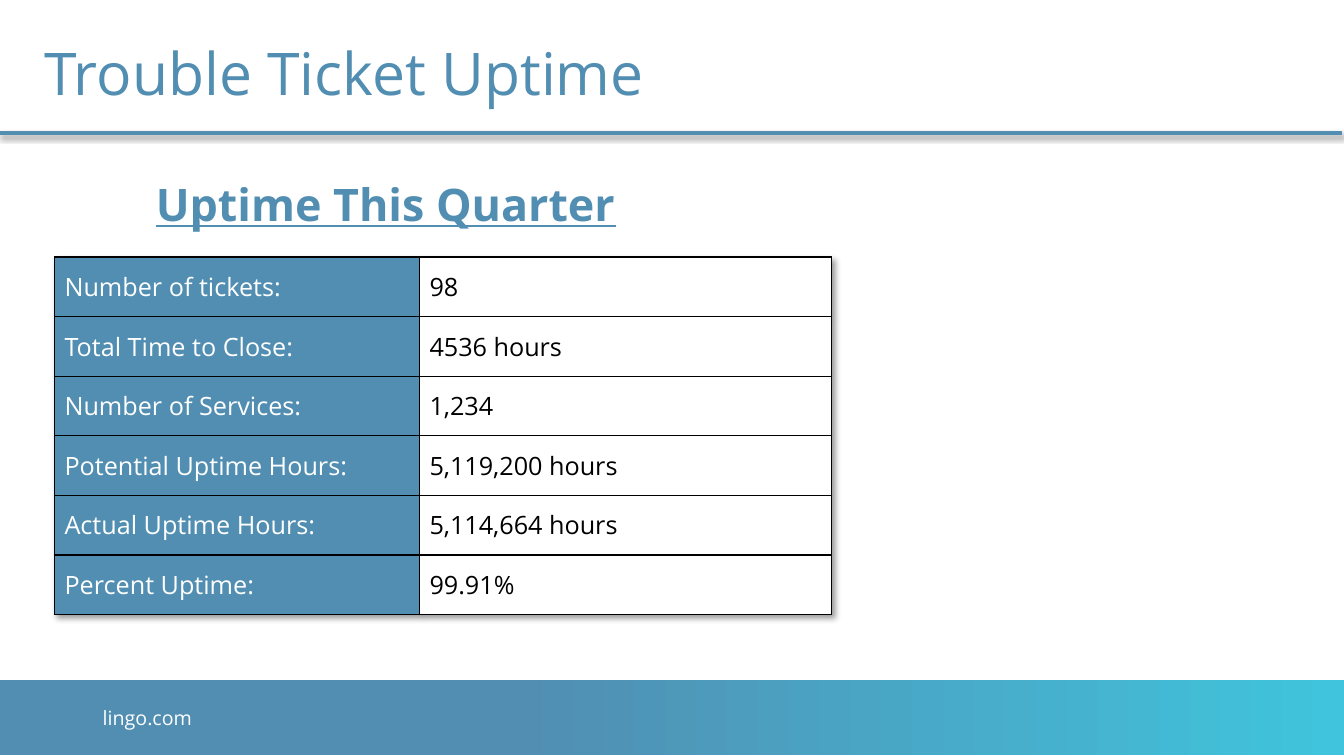
from lxml import etree
from pptx import Presentation
from pptx import util as u
from pptx.dml.color import RGBColor
from pptx.enum import shapes, text
from pptx.oxml import parse_xml
from pptx.oxml.ns import nsdecls, qn

COLORS = {"blue": "518EB2", "aqua": "40C4DD", "white": "FFFFFF", "black": "000000"}
FONT = "Open Sans"
ROWS = [
    ("Number of tickets:", "98"),
    ("Total Time to Close:", "4536 hours"),
    ("Number of Services:", "1,234"),
    ("Potential Uptime Hours:", "5,119,200 hours"),
    ("Actual Uptime Hours:", "5,114,664 hours"),
    ("Percent Uptime:", "99.91%"),
]


def color(name):
    return RGBColor.from_string(COLORS[name])


def add_span(para, words, size, shade, bold=False, underline=False):
    span = para.add_run()
    span.text = words
    font = span.font
    font.name, font.size, font.color.rgb = FONT, u.Pt(size), color(shade)
    font.bold, font.underline = bold, underline


def shadow_effect(blur, distance, angle):
    return parse_xml(
        f'<a:effectLst {nsdecls("a")}><a:outerShdw blurRad="{u.Pt(blur)}" '
        f'dist="{u.Pt(distance)}" dir="{angle * 60000}" algn="tl" rotWithShape="0">'
        f'<a:srgbClr val="{COLORS["black"]}"><a:alpha val="40000"/></a:srgbClr>'
        '</a:outerShdw></a:effectLst>')


def add_text(slide, box, words, size, shade, align=text.PP_ALIGN.LEFT, **style):
    frame = slide.shapes.add_textbox(*map(u.Inches, box)).text_frame
    frame.word_wrap = True
    para = frame.paragraphs[0]
    para.alignment = align
    add_span(para, words, size, shade, **style)


def add_footer(slide, box):
    left, top, width, height = box
    band = slide.shapes.add_shape(shapes.MSO_SHAPE.RECTANGLE, *map(u.Inches, box))
    band.shadow.inherit = False
    band.line.fill.background()
    band.fill.gradient()
    band.fill.gradient_angle = 0
    for stop, position, shade in zip(band.fill.gradient_stops, (0.38, 1), ("blue", "aqua")):
        stop.position = position
        stop.color.rgb = color(shade)
    add_text(slide, (left + 0.92, top + 0.2, 2.52, 0.4), "lingo.com", 14, "white")


def add_header(slide, box):
    left, top, width, height = box
    # Rule under the title
    rule_y = u.Inches(top + height + 0.08)
    rule = slide.shapes.add_connector(
        shapes.MSO_CONNECTOR.STRAIGHT, u.Inches(-0.03), rule_y, u.Inches(13.31), rule_y)
    rule.line.color.rgb = color("blue")
    rule.line.width = u.Pt(2.25)
    rule._element.spPr.append(shadow_effect(4, 3, 45))
    # Title
    title = slide.shapes.title
    title.left, title.top, title.width, title.height = map(u.Inches, box)
    frame = title.text_frame
    frame.vertical_anchor = text.MSO_ANCHOR.MIDDLE
    para = frame.paragraphs[0]
    para.alignment = text.PP_ALIGN.LEFT
    para.line_spacing = 0.9
    add_span(para, "Trouble Ticket Uptime", 42, "blue")


def add_borders(cell):
    properties = cell._tc.get_or_add_tcPr()
    for index, side in enumerate(("lnL", "lnR", "lnT", "lnB")):
        line = etree.Element(qn(f"a:{side}"), w=str(u.Pt(1)))
        fill = etree.SubElement(line, qn("a:solidFill"))
        etree.SubElement(fill, qn("a:srgbClr"), val=COLORS["black"])
        properties.insert(index, line)


def add_uptime_table(slide, box):
    frame = slide.shapes.add_table(len(ROWS), 2, *map(u.Inches, box))
    table = frame.table
    table.first_row = table.horz_banding = False
    table._tbl.tblPr.insert(0, shadow_effect(4, 3, 45))
    label_width = 3.62
    table.columns[0].width = u.Inches(label_width)
    table.columns[1].width = u.Inches(box[2] - label_width)
    for row, values in enumerate(ROWS):
        table.rows[row].height = u.Inches(box[3] / len(ROWS))
        for column, (fill, ink) in enumerate((("blue", "white"), ("white", "black"))):
            cell = table.cell(row, column)
            cell.vertical_anchor = text.MSO_ANCHOR.MIDDLE
            cell.fill.solid()
            cell.fill.fore_color.rgb = color(fill)
            add_borders(cell)
            add_span(cell.text_frame.paragraphs[0], values[column], 18, ink)


def main():
    deck = Presentation()
    deck.slide_width, deck.slide_height = u.Inches(13.33), u.Inches(7.5)
    slide = deck.slides.add_slide(deck.slide_layouts[5])
    add_footer(slide, (0, 6.75, 13.33, 0.74))
    add_header(slide, (0.34, 0.28, 11.68, 0.96))
    add_uptime_table(slide, (0.54, 2.55, 7.71, 3.55))
    add_text(slide, (1.13, 1.7, 5.39, 0.64), "Uptime This Quarter", 32, "blue",
             text.PP_ALIGN.CENTER, bold=True, underline=True)
    deck.save("out.pptx")


if __name__ == "__main__":
    main()
